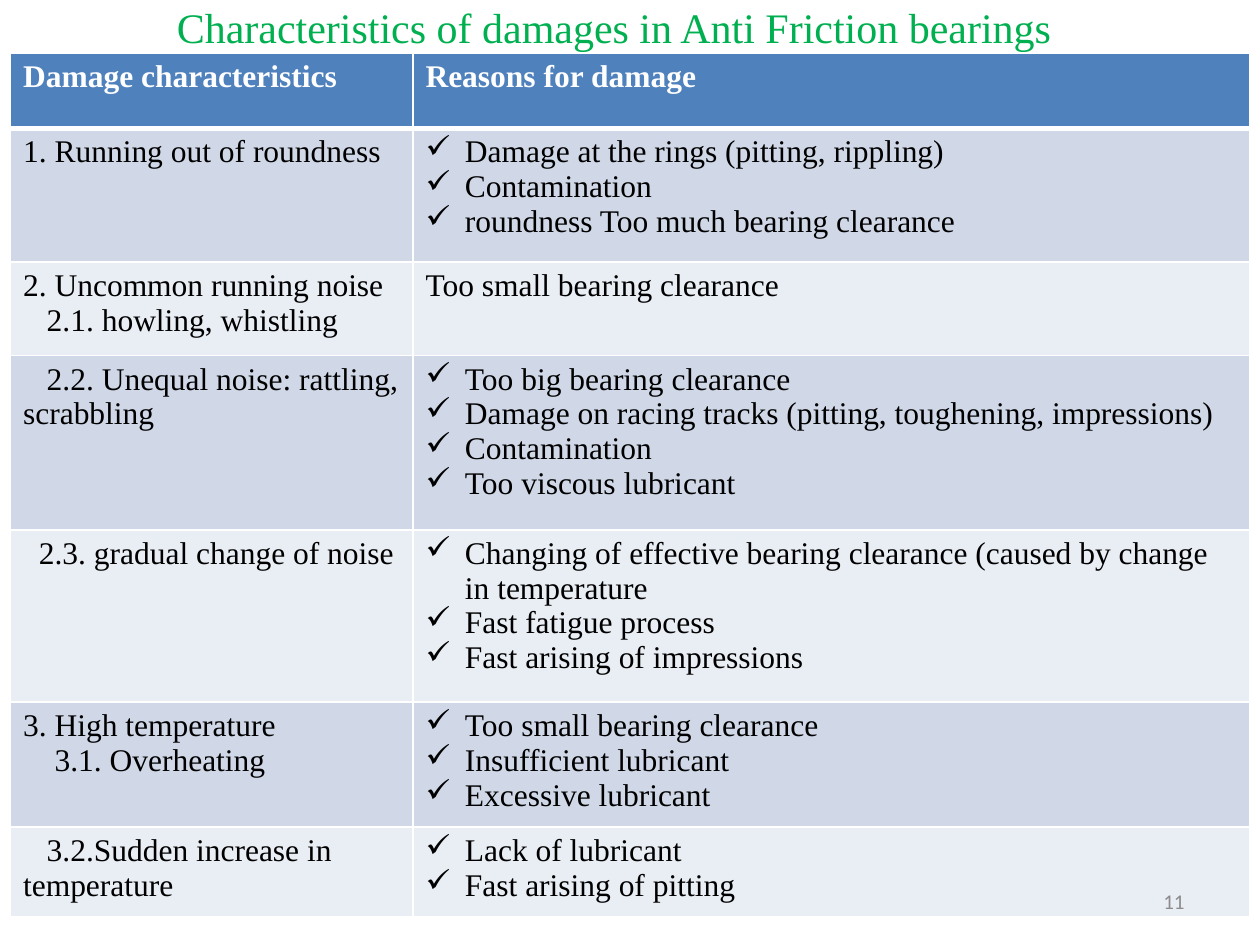
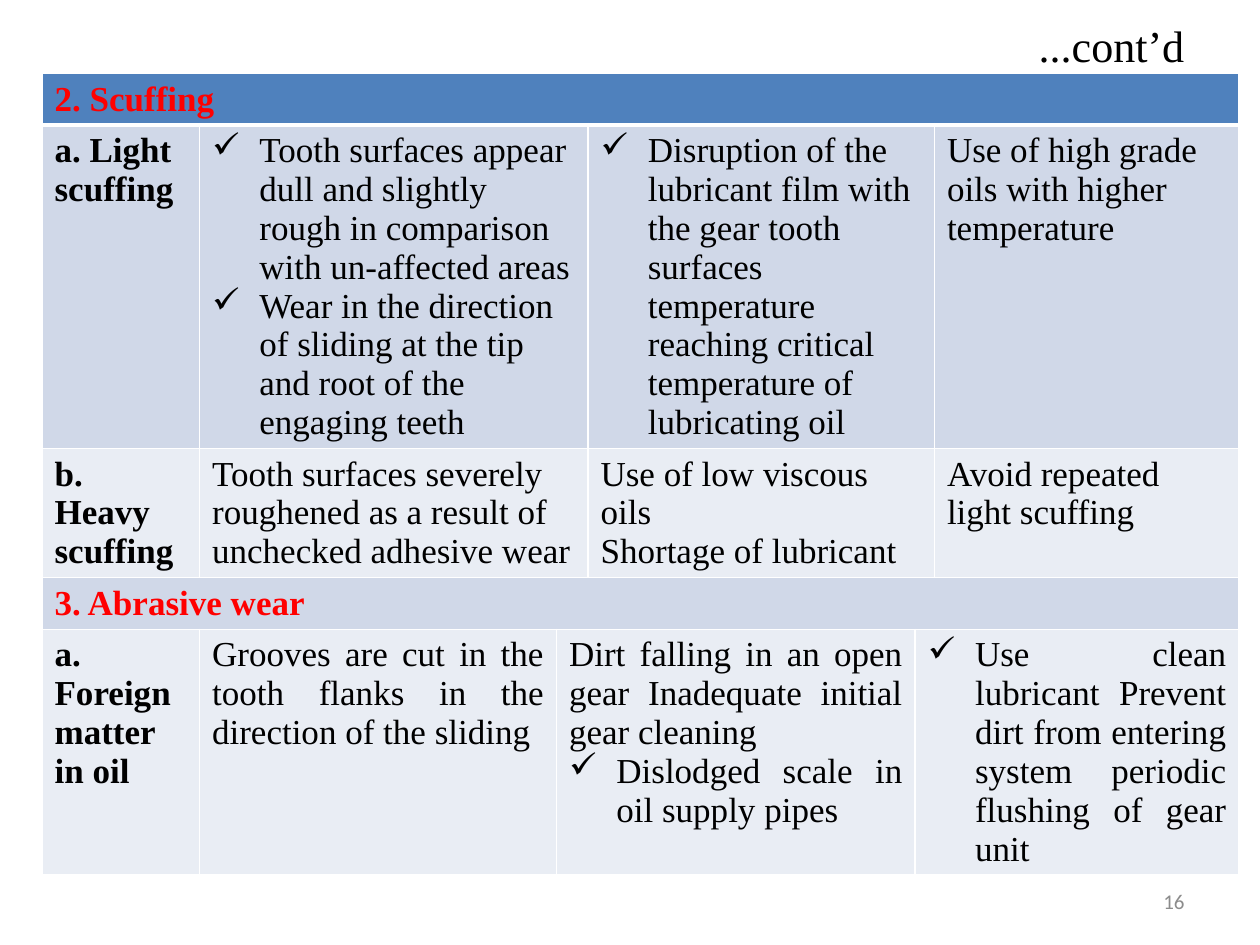
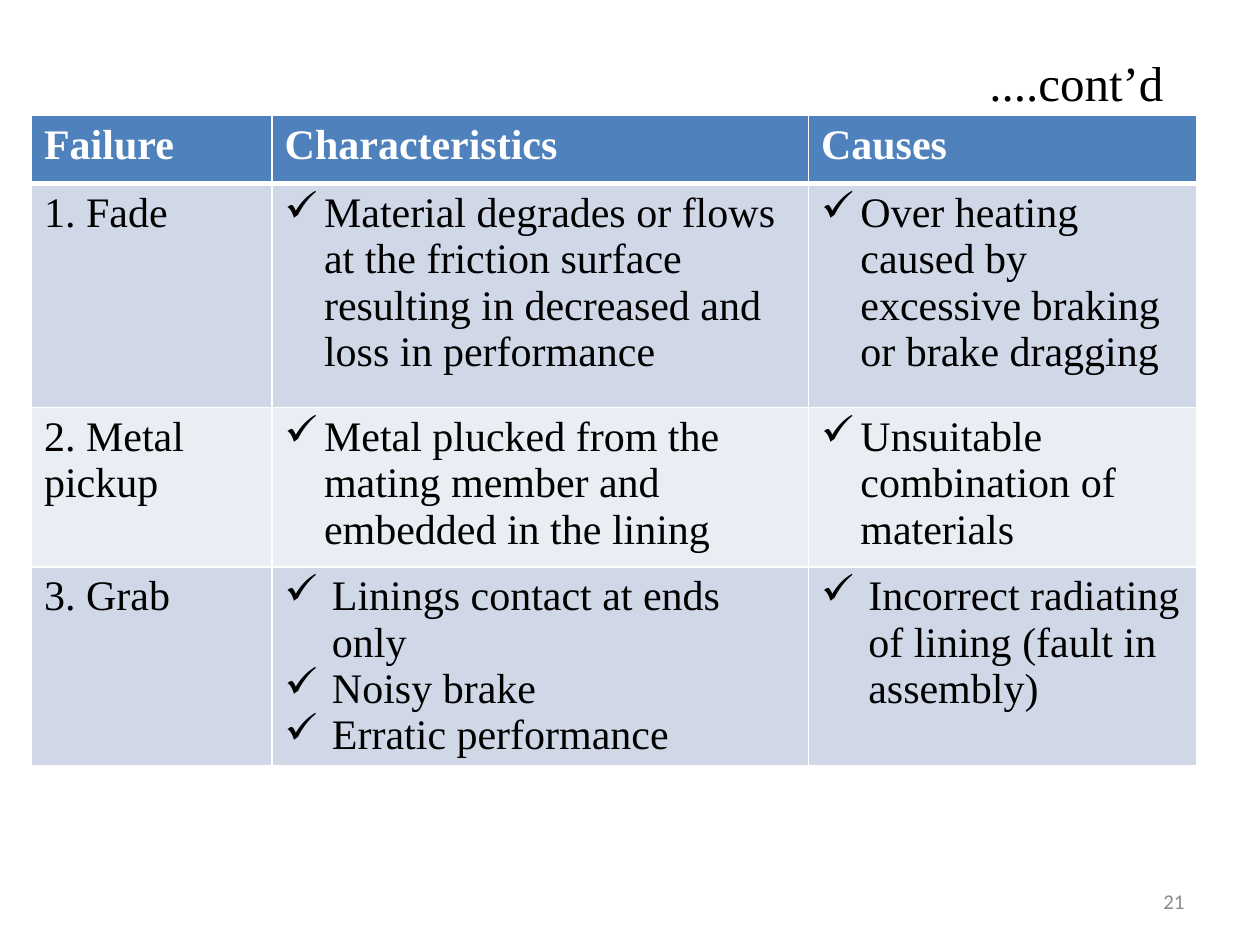
from dataclasses import dataclass

from lxml.etree import SubElement
from pptx import Presentation
from pptx.dml.color import RGBColor as RGB
from pptx.enum.text import MSO_ANCHOR as Anchor, MSO_AUTO_SIZE as Auto, PP_ALIGN as Align
from pptx.oxml import parse_xml
from pptx.oxml.ns import nsdecls, qn
from pptx.util import Pt


@dataclass(frozen=True)
class Theme:
    serif: str = "Times New Roman"
    sans: str = "Calibri"
    black: str = "000000"
    white: str = "FFFFFF"
    green: str = "00B050"
    red: str = "FF0000"
    grey: str = "8C8C8C"
    head: str = "4F81BD"
    bands: tuple = ("E9EDF4", "D0D8E8")
    foot: float = 12
    thin: float = 1
    thick: float = 3


THEME = Theme()
NARROW, WIDE = 22.5, 27


def ticks(hang, *texts):
    """Paragraphs as (text, left indent, first-line indent)."""
    return [(text, hang, -hang) for text in texts]


def plain(*texts):
    return [(text, 0, 0) for text in texts]


def inset(text, first):
    return [(text, 0, first)]


# A row is (height, cells); a cell is (columns spanned, paragraphs).
BEARINGS = [
    (43, [(1, plain("Damage characteristics")), (1, plain("Reasons for damage"))]),
    (76.5, [(1, plain("1. Running out of roundness")),
            (1, ticks(NARROW, "Damage at the rings (pitting, rippling)", "Contamination",
                      "roundness Too much bearing clearance"))]),
    (53.5, [(1, plain("2. Uncommon running noise") + inset("2.1. howling, whistling", 13.5)),
            (1, plain("Too small bearing clearance"))]),
    (99.5, [(1, inset("2.2. Unequal noise: rattling, scrabbling", 13.5)),
            (1, ticks(NARROW, "Too big bearing clearance",
                      "Damage on racing tracks (pitting, toughening, impressions)",
                      "Contamination", "Too viscous lubricant"))]),
    (98.5, [(1, inset("2.3. gradual change of noise", 9)),
            (1, ticks(NARROW, "Changing of effective bearing clearance "
                      "(caused by change in temperature",
                      "Fast fatigue process", "Fast arising of impressions"))]),
    (71.5, [(1, plain("3. High temperature") + inset("3.1. Overheating", 18)),
            (1, ticks(NARROW, "Too small bearing clearance", "Insufficient lubricant",
                      "Excessive lubricant"))]),
    (51, [(1, inset("3.2.Sudden increase in temperature", 13.5)),
          (1, ticks(NARROW, "Lack of lubricant", "Fast arising of pitting"))]),
]

GEARS = [
    (29.5, [(6, plain("2. Scuffing"))]),
    (184.5, [(1, plain("a. Light", "scuffing")),
             (2, ticks(WIDE, "Tooth surfaces appear dull and slightly rough in comparison "
                       "with un-affected areas",
                       "Wear in the direction of sliding at the tip and root of the "
                       "engaging teeth")),
             (2, ticks(WIDE, "Disruption of the lubricant film with the gear tooth surfaces "
                       "temperature reaching critical temperature of lubricating oil")),
             (1, plain("Use of high grade", "oils with higher", "temperature"))]),
    (73.5, [(1, plain("b. Heavy", "scuffing")),
            (2, plain("Tooth surfaces severely", "roughened as a result of",
                      "unchecked adhesive wear")),
            (2, plain("Use of low viscous oils", "Shortage of lubricant")),
            (1, plain("Avoid repeated", "light scuffing"))]),
    (29.5, [(6, plain("3. Abrasive wear"))]),
    (140, [(1, plain("a. Foreign", "matter in oil")),
           (1, plain("Grooves are cut in the tooth flanks in the direction of the sliding")),
           (2, plain("Dirt falling in an open gear Inadequate initial gear cleaning")
            + ticks(WIDE, "Dislodged scale in oil supply pipes")),
           (2, ticks(WIDE, "Use clean lubricant Prevent dirt from entering system "
                     "periodic flushing of gear unit"))]),
]

BRAKES = [
    (39, [(1, plain("Failure")), (1, plain("Characteristics")), (1, plain("Causes"))]),
    (128, [(1, plain("1. Fade")),
           (1, ticks(NARROW, "Material degrades or flows at the friction surface "
                     "resulting in decreased and loss in performance")),
           (1, ticks(NARROW, "Over heating caused by excessive braking or brake dragging"))]),
    (91, [(1, plain("2. Metal", "pickup")),
          (1, ticks(NARROW, "Metal plucked from the mating member and embedded in the lining")),
          (1, ticks(NARROW, "Unsuitable combination of materials"))]),
    (113, [(1, plain("3. Grab")),
           (1, ticks(WIDE, "Linings contact at ends only", "Noisy brake",
                     "Erratic performance")),
           (1, ticks(WIDE, "Incorrect radiating of lining (fault in assembly)"))]),
]

SLIDES = [
    dict(page="11", title="Characteristics of damages in Anti Friction bearings",
         box=(36, 6, 630, 18), size=24, ink=THEME.green, align=Align.CENTER,
         spot=(6, 30.3), cols=(230, 478), rows=BEARINGS, body=18),
    dict(page="16", title="...cont’d",
         box=(36, 12, 648, 27), size=25.2, ink=THEME.black, align=Align.RIGHT,
         spot=(24, 42), cols=(90, 204, 18, 187, 11, 174), rows=GEARS, body=20,
         strong=True, even={4}),
    dict(page="21", title="....cont’d",
         box=(36, 22, 636, 50), size=28, ink=THEME.black, align=Align.RIGHT,
         spot=(18, 66), cols=(137.5, 306.5, 222), rows=BRAKES, body=24),
]


def write(par, text, size, ink, face=THEME.serif, bold=False, align=Align.LEFT):
    par.alignment = align
    run = par.add_run()
    run.text = text
    font = run.font
    font.name, font.size, font.bold = face, Pt(size), bold
    font.color.rgb = RGB.from_string(ink)


def indent(par, left, first):
    """Set the indents; a hanging first line gets a tick."""
    props = par._p.get_or_add_pPr()
    props.set("marL", str(Pt(left)))
    props.set("indent", str(Pt(first)))
    if first < 0:
        SubElement(props, qn("a:buChar")).set("char", "✓")


def rule(cell, row):
    """Draw the cell borders, thick between the head row and the next."""
    props = cell._tc.get_or_add_tcPr()
    for place, side in enumerate("LRTB"):
        thick = (row, side) in ((0, "B"), (1, "T"))
        width = Pt(THEME.thick if thick else THEME.thin)
        props.insert(place, parse_xml(
            f'<a:ln{side} {nsdecls("a")} w="{width}"><a:solidFill>'
            f'<a:srgbClr val="{THEME.white}"/></a:solidFill></a:ln{side}>'))


def add_grid(slide, data):
    cols, rows = data["cols"], data["rows"]
    high = sum(tall for tall, _ in rows)
    frame = slide.shapes.add_table(
        len(rows), len(cols), *map(Pt, (*data["spot"], sum(cols), high)))
    grid = frame.table
    for col, wide in zip(grid.columns, cols):
        col.width = Pt(wide)
    for y, (tall, cells) in enumerate(rows):
        grid.rows[y].height = Pt(tall)
        for cell in grid.rows[y].cells:
            cell.fill.solid()
            cell.fill.fore_color.rgb = RGB.from_string(
                THEME.bands[y % 2] if y else THEME.head)
            rule(cell, y)
        x = 0
        for span, pars in cells:
            cell = grid.cell(y, x)
            if span > 1:
                cell.merge(grid.cell(y, x + span - 1))
            full = span == len(cols)
            ink = THEME.red if full else THEME.black if y else THEME.white
            bold = full or y == 0 or (x == 0 and data.get("strong", False))
            align = Align.JUSTIFY if y in data.get("even", ()) else Align.LEFT
            frame = cell.text_frame
            for n, (text, left, first) in enumerate(pars):
                par = frame.add_paragraph() if n else frame.paragraphs[0]
                write(par, text, data["body"], ink, bold=bold, align=align)
                indent(par, left, first)
            x += span


def add_title(slide, data):
    title = slide.shapes.title
    title.left, title.top, title.width, title.height = map(Pt, data["box"])
    frame = title.text_frame
    frame.auto_size, frame.vertical_anchor = Auto.NONE, Anchor.MIDDLE
    write(frame.paragraphs[0], data["title"], data["size"], data["ink"],
          align=data["align"])


def add_page(slide, page):
    frame = slide.shapes.add_textbox(*map(Pt, (516, 500.5, 168, 28.75))).text_frame
    frame.word_wrap, frame.vertical_anchor = True, Anchor.MIDDLE
    write(frame.paragraphs[0], page, THEME.foot, THEME.grey, THEME.sans, align=Align.RIGHT)


def main():
    deck = Presentation()
    deck.slide_width, deck.slide_height = Pt(720), Pt(540)
    for data in SLIDES:
        slide = deck.slides.add_slide(deck.slide_layouts[5])
        add_title(slide, data)
        add_grid(slide, data)
        add_page(slide, data["page"])
    deck.save("out.pptx")


if __name__ == "__main__":
    main()
